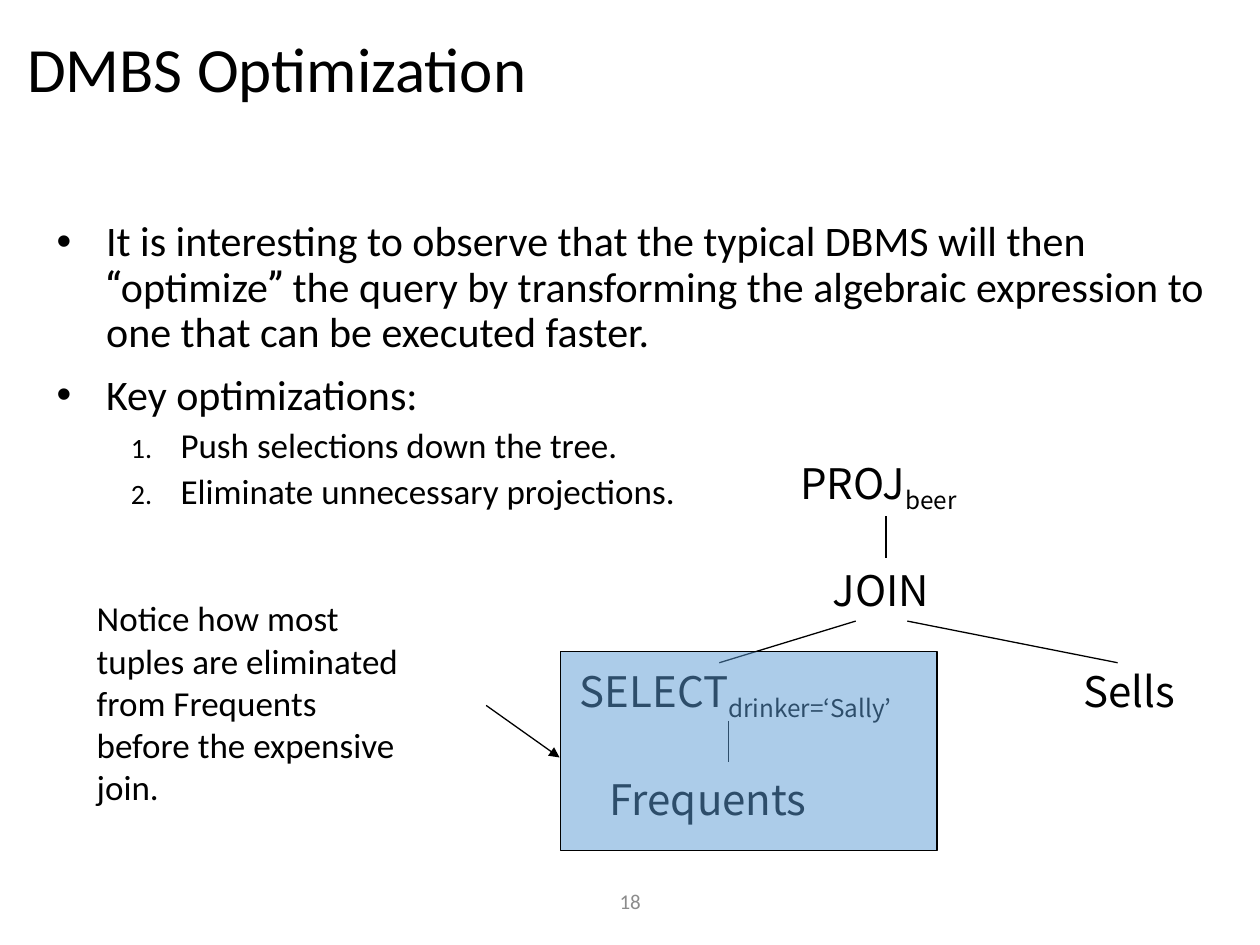
from lxml.etree import SubElement
from pptx import Presentation
from pptx.dml.color import RGBColor
from pptx.enum.shapes import MSO_CONNECTOR, MSO_SHAPE
from pptx.enum.text import MSO_ANCHOR, PP_ALIGN
from pptx.oxml.ns import qn
from pptx.util import Cm, Pt

THEME = {
    "ink": RGBColor(0x00, 0x00, 0x00),
    "muted": RGBColor(0x8C, 0x8C, 0x8C),
    "highlight": RGBColor(0x5B, 0x9B, 0xD5),
    "text": "Calibri",
    "quote": "Roboto",
    "tree": "Noto Sans CJK KR",
    "title_size": Pt(36),
    "point_size": Pt(24),
    "step_size": Pt(20),
    "page_size": Pt(12),
    "line": Pt(0.75),
}

TITLE = "DMBS Optimization"
PAGE = "18"
POINTS = [
    ("point", ["It is interesting to observe that the typical DBMS will then ", "“", "optimize", "”",
               " the query by transforming the algebraic expression to one that can be executed faster."]),
    ("point", ["Key optimizations:"]),
    ("step", ["Push selections down the tree."]),
    ("step", ["Eliminate unnecessary projections."]),
]
NOTE = ["Notice how most tuples are eliminated", "from Frequents", "before the expensive join."]
OPERATORS = [
    ("PROJ", "beer", 16.13, 9.22),
    ("JOIN", "", 16.79, 11.38),
    ("SELECT", "drinker=‘Sally’", 11.69, 13.41),
    ("Sells", "", 21.84, 13.41),
    ("Frequents", "", 12.29, 15.6),
]
EDGE_HEIGHT = 0.84
EDGES = [(17.86, 17.86, 10.41), (17.25, 14.5, 12.52), (18.29, 22.53, 12.52), (14.68, 14.68, 14.53)]
ARROW = (9.8, 14.22, 11.28, 15.27)
PUSHED_DOWN = (11.3, 13.13, 7.59, 4.01)

LEVELS = {
    "point": {"size": THEME["point_size"], "before": Pt(10), "indent": Cm(1),
              "bullet": [("buFont", {"typeface": "Arial"}), ("buChar", {"char": "•"})]},
    "step": {"size": THEME["step_size"], "before": Pt(5), "indent": Cm(2.5),
             "bullet": [("buSzPct", {"val": "80000"}), ("buFont", {"typeface": "+mj-lt"}),
                        ("buAutoNum", {"type": "arabicPeriod"})]},
}


def apply(target, values):
    """Set every attribute named in the dict."""
    for name, value in values.items():
        setattr(target, name, value)


def add_frame(slide, place, **values):
    """Add a text box and return its frame."""
    frame = slide.shapes.add_textbox(*map(Cm, place)).text_frame
    apply(frame, {"word_wrap": True, **values})
    return frame


def add_run(paragraph, words, size, name=THEME["text"], color=THEME["ink"]):
    """Add formatted words to a paragraph."""
    run = paragraph.add_run()
    run.text = words
    apply(run.font, {"size": size, "name": name})
    run.font.color.rgb = color
    return run


def add_line(slide, *ends):
    """Draw a thin line and return its line properties."""
    edge = slide.shapes.add_connector(MSO_CONNECTOR.STRAIGHT, *map(Cm, ends))
    edge.line.width = THEME["line"]
    edge.line.color.rgb = THEME["ink"]
    SubElement(edge._element.spPr, qn("a:effectLst"))
    return edge.line._get_or_add_ln()


def add_points(slide):
    """Write the bulleted points and the numbered steps."""
    body = add_frame(slide, (0.89, 4.32, 24, 12.07))
    for index, (level, pieces) in enumerate(POINTS):
        paragraph = body.add_paragraph() if index else body.paragraphs[0]
        style = LEVELS[level]
        apply(paragraph, {"line_spacing": 0.9, "space_before": style["before"],
                          "level": int(level == "step")})
        properties = paragraph._p.get_or_add_pPr()
        properties.set("marL", str(style["indent"]))
        properties.set("indent", str(-Cm(1)))
        for tag, values in style["bullet"]:
            SubElement(properties, qn(f"a:{tag}"), values)
        for words in pieces:
            add_run(paragraph, words, style["size"], THEME["quote" if words in "“”" else "text"])


def add_tree(slide):
    """Draw the expression tree with its highlighted branch."""
    for operator, subscript, left, top in OPERATORS:
        label = add_frame(slide, (left, top, 7, 1.2), word_wrap=False, margin_left=0, margin_top=0)
        add_run(label.paragraphs[0], operator, THEME["point_size"], THEME["tree"])
        if subscript:
            run = add_run(label.paragraphs[0], subscript, THEME["point_size"], THEME["tree"])
            run.font._element.set("baseline", "-25000")
    for start, end, top in EDGES:
        add_line(slide, start, top, end, top + EDGE_HEIGHT)
    branch = slide.shapes.add_shape(MSO_SHAPE.RECTANGLE, *map(Cm, PUSHED_DOWN))
    branch.shadow.inherit = False
    branch.fill.solid()
    branch.fill.fore_color.rgb = THEME["highlight"]
    tint = branch._element.spPr.find(qn("a:solidFill")).find(qn("a:srgbClr"))
    SubElement(tint, qn("a:alpha"), val="50000")
    branch.line.color.rgb = THEME["ink"]
    branch.line.width = THEME["line"]


def add_note(slide):
    """Write the side note and its arrow."""
    note = add_frame(slide, (1.7, 11.91, 7.26, 4.5))
    for index, words in enumerate(NOTE):
        paragraph = note.add_paragraph() if index else note.paragraphs[0]
        add_run(paragraph, words, THEME["step_size"])
    SubElement(add_line(slide, *ARROW), qn("a:tailEnd"), type="triangle")


def main():
    """Build the slide and save it."""
    deck = Presentation()
    apply(deck, {"slide_width": Cm(25.4), "slide_height": Cm(19.05)})
    slide = deck.slides.add_slide(deck.slide_layouts[6])
    page = add_frame(slide, (8.41, 17.65, 8.59, 1.02), vertical_anchor=MSO_ANCHOR.MIDDLE).paragraphs[0]
    page.alignment = PP_ALIGN.CENTER
    add_run(page, PAGE, THEME["page_size"], color=THEME["muted"])
    title = add_frame(slide, (0.3, 0.2, 24.79, 2.51), vertical_anchor=MSO_ANCHOR.MIDDLE).paragraphs[0]
    title.line_spacing = 0.9
    add_run(title, TITLE, THEME["title_size"])
    add_points(slide)
    add_tree(slide)
    add_note(slide)
    deck.save("out.pptx")


if __name__ == "__main__":
    main()
